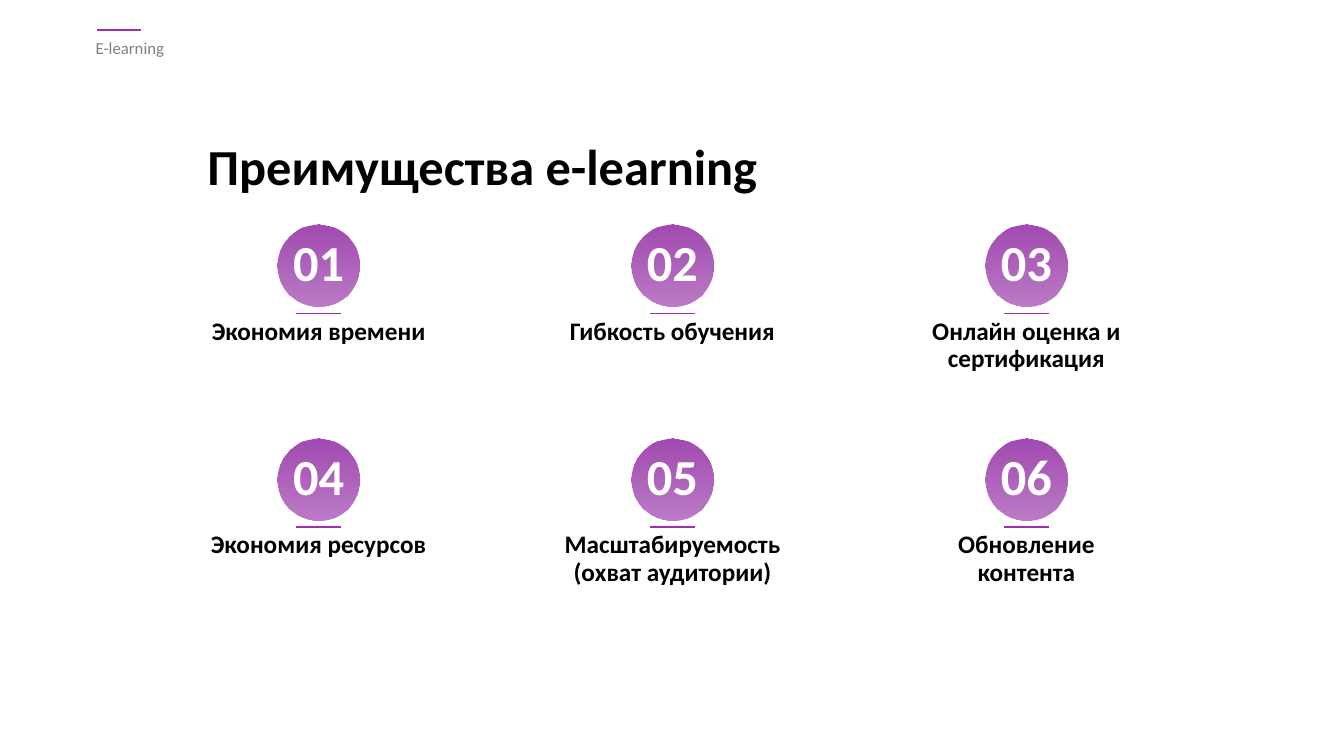
from pptx import Presentation
from pptx.dml.color import RGBColor
from pptx.enum.shapes import MSO_CONNECTOR, MSO_SHAPE
from pptx.enum.text import MSO_ANCHOR, PP_ALIGN
from pptx.oxml.ns import qn
from pptx.util import Inches, Pt
from lxml import etree

OVAL = MSO_SHAPE.OVAL
STRAIGHT = MSO_CONNECTOR.STRAIGHT
TOP, MIDDLE = MSO_ANCHOR.TOP, MSO_ANCHOR.MIDDLE
LEFT, CENTER, JUSTIFY = PP_ALIGN.LEFT, PP_ALIGN.CENTER, PP_ALIGN.JUSTIFY

BLACK = RGBColor(0x00, 0x00, 0x00)
WHITE = RGBColor(0xFF, 0xFF, 0xFF)
GREY = RGBColor(0x80, 0x80, 0x80)
PURPLE = RGBColor(0x9F, 0x2E, 0xB2)
VIOLET = RGBColor(0xA2, 0x4A, 0xB1)

FONT = "Calibri"
DISC = 0.81
DASH = 0.44
LABEL = 2.44
COLS = 3
LEFT_MID, COL_GAP = 3.16, 3.51
FIRST_TOP, ROW_GAP = 2.23, 2.12
ITEMS = [
    "Экономия времени",
    "Гибкость обучения",
    "Онлайн оценка и сертификация",
    "Экономия ресурсов",
    "Масштабируемость (охват аудитории)",
    "Обновление контента",
]


def write(frame, text, size=18, color=BLACK, bold=True, align=CENTER,
          anchor=TOP, wrap=True):
    frame.word_wrap = wrap
    frame.vertical_anchor = anchor
    para = frame.paragraphs[0]
    para.alignment = align
    para.line_spacing = 0.9
    run = para.add_run()
    run.text = text
    font = run.font
    font.name, font.size, font.bold = FONT, Pt(size), bold
    font.color.rgb = color


def add_text(slide, x, y, w, h, text, **style):
    box = slide.shapes.add_textbox(Inches(x), Inches(y), Inches(w), Inches(h))
    write(box.text_frame, text, **style)


def add_dash(slide, x, y):
    line = slide.shapes.add_connector(
        STRAIGHT, Inches(x), Inches(y), Inches(x + DASH), Inches(y))
    line.line.color.rgb = PURPLE
    line.line.width = Pt(1.25)
    etree.SubElement(line._element.spPr, qn("a:effectLst"))


def add_disc(slide, x, y, text):
    disc = slide.shapes.add_shape(
        OVAL, Inches(x), Inches(y), Inches(DISC), Inches(DISC))
    disc.shadow.inherit = False
    disc.line.fill.background()
    # Violet fading to 72 % opacity, top to bottom
    disc.fill.gradient()
    disc.fill.gradient_angle = 270
    for stop in disc.fill.gradient_stops:
        stop.color.rgb = VIOLET
    last = list(disc._element.spPr.iter(qn("a:srgbClr")))[-1]
    etree.SubElement(last, qn("a:alpha"), val="72000")
    frame = disc.text_frame
    frame.margin_left = frame.margin_right = 0
    frame.margin_top = frame.margin_bottom = 0
    write(frame, text, size=36, color=WHITE, anchor=MIDDLE, wrap=False)


def add_item(slide, index, text):
    row, col = divmod(index, COLS)
    mid = LEFT_MID + col * COL_GAP
    top = FIRST_TOP + row * ROW_GAP
    add_disc(slide, mid - DISC / 2, top, f"{index + 1:02}")
    add_dash(slide, mid - DASH / 2, top + 0.88)
    add_text(slide, mid - LABEL / 2, top + 0.88, LABEL, 0.26, text)


def main():
    deck = Presentation()
    deck.slide_width, deck.slide_height = Inches(13.33), Inches(7.5)
    slide = deck.slides.add_slide(deck.slide_layouts[6])

    # Header and title
    add_dash(slide, 0.96, 0.3)
    add_text(slide, 0.85, 0.35, 2.53, 0.56, "E-learning",
             size=12, color=GREY, bold=False, align=JUSTIFY)
    add_text(slide, 1.96, 1.36, 7.63, 0.66, "Преимущества e-learning",
             size=36, align=LEFT)

    # Numbered benefits
    for index, text in enumerate(ITEMS):
        add_item(slide, index, text)

    deck.save("out.pptx")


if __name__ == "__main__":
    main()
